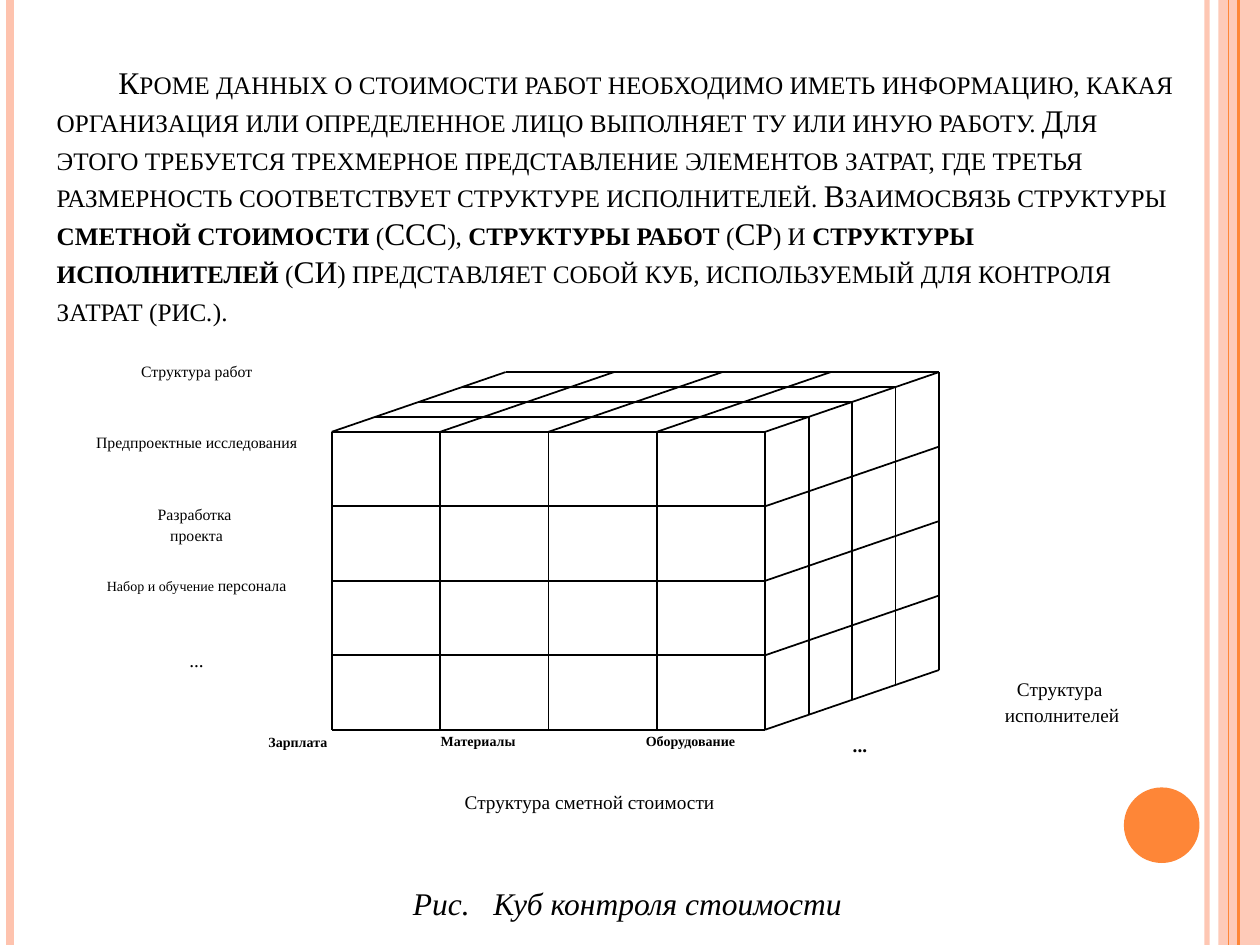
from dataclasses import dataclass, field
from typing import NamedTuple

from lxml.etree import SubElement
from pptx import Presentation
from pptx.dml.color import RGBColor
from pptx.enum.shapes import MSO_CONNECTOR as Link, MSO_SHAPE as Shape
from pptx.enum.text import MSO_ANCHOR as Anchor, PP_ALIGN as Align
from pptx.oxml.ns import qn
from pptx.util import Inches, Pt

WIDE, HIGH = Inches(10), Inches(7.5)
FACE, BLACK, PEACH, ORANGE = "Times New Roman", "000000", "FEC3AE", "FE8637"
CELLS = 4
INDENT = Inches(0.49)


class Box(NamedTuple):
    """Left, top, width and height in percent of the slide."""
    left: float
    top: float
    width: float
    height: float


class Run(NamedTuple):
    text: str
    size: float
    bold: bool = False
    italic: bool = False
    extra: dict = {}


@dataclass
class Label:
    box: Box
    lines: list[list[Run]]
    inset: float = 0.01
    space: float = 1.15
    indent: int = 0


@dataclass
class Rule:
    """A full-height line of the frame, placed in percent of the width."""
    left: float
    weight: float
    color: str
    alpha: int = field(default=100)


def across(share: float) -> int:
    return round(WIDE * share / 100)


def down(share: float) -> int:
    return round(HIGH * share / 100)


def place(box: Box) -> tuple[int, int, int, int]:
    return across(box.left), down(box.top), across(box.width), down(box.height)


def paint(part, color: str, alpha: int = 100) -> None:
    """Give a fill, taken from a shape or a line, one colour."""
    part.solid()
    part.fore_color.rgb = RGBColor.from_string(color)
    if alpha < 100:
        tone = part._xPr.find(qn("a:solidFill"))[0]
        SubElement(tone, qn("a:alpha"), val=str(alpha * 1000))


def stroke(start: tuple, end: tuple, weight: float, color: str, alpha: int = 100) -> None:
    line = slide.shapes.add_connector(Link.STRAIGHT, *start, *end)
    line.line.width = Pt(weight)
    paint(line.line.fill, color, alpha)
    SubElement(line._element.spPr, qn("a:effectLst"))


def solid(kind: Shape, box: Box, color: str, alpha: int = 100) -> None:
    shape = slide.shapes.add_shape(kind, *place(box))
    shape.shadow.inherit = False
    paint(shape.fill, color, alpha)
    shape.line.fill.background()


def write(para, runs: list[Run], indent: int = 0, **format) -> None:
    if indent:
        props = para._p.get_or_add_pPr()
        props.set("marL", "0")
        props.set("indent", str(indent))
    for name, value in format.items():
        setattr(para, name, value)
    for item in runs:
        run = para.add_run()
        run.text = item.text
        looks = {"name": FACE, "size": Pt(item.size), "bold": item.bold, "italic": item.italic}
        for name, value in looks.items():
            setattr(run.font, name, value)
        run.font.color.rgb = RGBColor.from_string(BLACK)
        for name, value in item.extra.items():
            run._r.get_or_add_rPr().set(name, value)


def note(label: Label) -> None:
    frame = slide.shapes.add_textbox(*place(label.box)).text_frame
    frame.word_wrap = True
    for side in ("left", "top", "right", "bottom"):
        inset = label.inset if side in ("left", "right") else label.inset / 2
        setattr(frame, f"margin_{side}", Inches(inset))
    for i, runs in enumerate(label.lines):
        para = frame.add_paragraph() if i else frame.paragraphs[0]
        write(para, runs, label.indent, alignment=Align.CENTER, line_spacing=label.space)


def point(col: float, row: float, deep: float) -> tuple[int, int]:
    """Project a cube node: columns right, rows down, depth up and right."""
    return (across(26.33 + 8.6 * col + 3.45 * deep),
            down(45.7 + 7.88 * row - 1.58 * deep))


def edge(start: tuple, end: tuple) -> None:
    stroke(point(*start), point(*end), 1, BLACK)


deck = Presentation()
deck.slide_width, deck.slide_height = WIDE, HIGH
slide = deck.slides.add_slide(deck.slide_layouts[5])

# Frame
FRAME = [Rule(95.8, 3, PEACH, 93), Rule(0.8, 4.5, PEACH),
         Rule(98.3, 1.5, ORANGE), Rule(97.5, 0.75, ORANGE)]
solid(Shape.RECTANGLE, Box(96.7, 0, 3.3, 100), PEACH, 87)
for rule in FRAME:
    stroke((across(rule.left), 0), (across(rule.left), HIGH),
           rule.weight, rule.color, rule.alpha)
solid(Shape.OVAL, Box(89.2, 83.33, 6, 8), ORANGE)

# Title
TITLE = [
    ("Кроме данных о стоимости работ необходимо иметь информацию, какая организация "
     "или определенное лицо выполняет ту или иную работу. Для этого требуется "
     "трехмерное представление элементов затрат, где третья размерность соответствует "
     "структуре исполнителей. Взаимосвязь структуры ", False, False),
    ("сметной стоимости ", True, False),
    ("(ССС), ", False, False),
    ("структуры работ ", True, False),
    ("(СР) и ", False, False),
    ("структуры исполнителей", True, False),
    (" (СИ) представляет собой куб, используемый для контроля затрат (рис", False, False),
    (".", False, True),
    (").", False, False),
]
title = slide.shapes.title
title.left, title.top, title.width, title.height = place(Box(3.5, 4, 91.5, 31.33))
title.text_frame.vertical_anchor = Anchor.BOTTOM
title.text_frame.word_wrap = True
write(title.text_frame.paragraphs[0],
      [Run(text, 18, bold, slant, {"cap": "small"}) for text, bold, slant in TITLE],
      INDENT, alignment=Align.LEFT, line_spacing=Pt(21.6))

# Cube: front, side and top faces
for i in range(CELLS + 1):
    edge((0, i, 0), (CELLS, i, 0))
    edge((i, 0, 0), (i, CELLS, 0))
    edge((CELLS, i, 0), (CELLS, i, CELLS))
for i in range(CELLS):
    edge((i, 0, 0), (i, 0, CELLS))
    edge((CELLS, 0, i + 1), (CELLS, CELLS, i + 1))
    edge((0, 0, i + 1), (CELLS, 0, i + 1))

# Work names, one under another
WORKS = [
    [[Run("Структура работ", 9)]],
    [[Run("Предпроектные исследования", 9)]],
    [[Run("Разработка ", 9)], [Run("проекта", 9)]],
    [[Run("Набор и обучение ", 8), Run("персонала", 9)]],
    [[Run("...", 11)]],
]
for i, lines in enumerate(WORKS):
    note(Label(Box(6.7, 37.87 + 7.57 * i, 17.8, 7.6), lines))

# Cost names and axis names
NAMES = [
    Label(Box(15.6, 77.33, 16.1, 7.5), [[Run("Зарплата", 8, True)]]),
    Label(Box(29.9, 77.2, 16.1, 7.6), [[Run("Материалы", 8, True)]]),
    Label(Box(45.9, 77.2, 17.8, 7.6), [[Run("Оборудование", 8, True)]]),
    Label(Box(60.2, 77.2, 16.1, 7.6), [[Run("...", 11, True)]]),
    Label(Box(74.5, 71.2, 19.6, 10.67), [[Run("Структура ", 11)], [Run("исполнителей", 11)]]),
    Label(Box(24.5, 83.2, 44.6, 6), [[Run("Структура сметной стоимости", 11)]]),
]
# Caption, with a widened gap after the first word
CAPTION = [Run("Рис.", 18, italic=True), Run(" ", 18, italic=True, extra={"spc": "900"}),
           Run("Куб контроля стоимости", 18, italic=True)]
NAMES.append(Label(Box(14, 90.93, 66.7, 7.5), [CAPTION], 0.1, 1.5, INDENT))
for label in NAMES:
    note(label)

deck.save("out.pptx")
